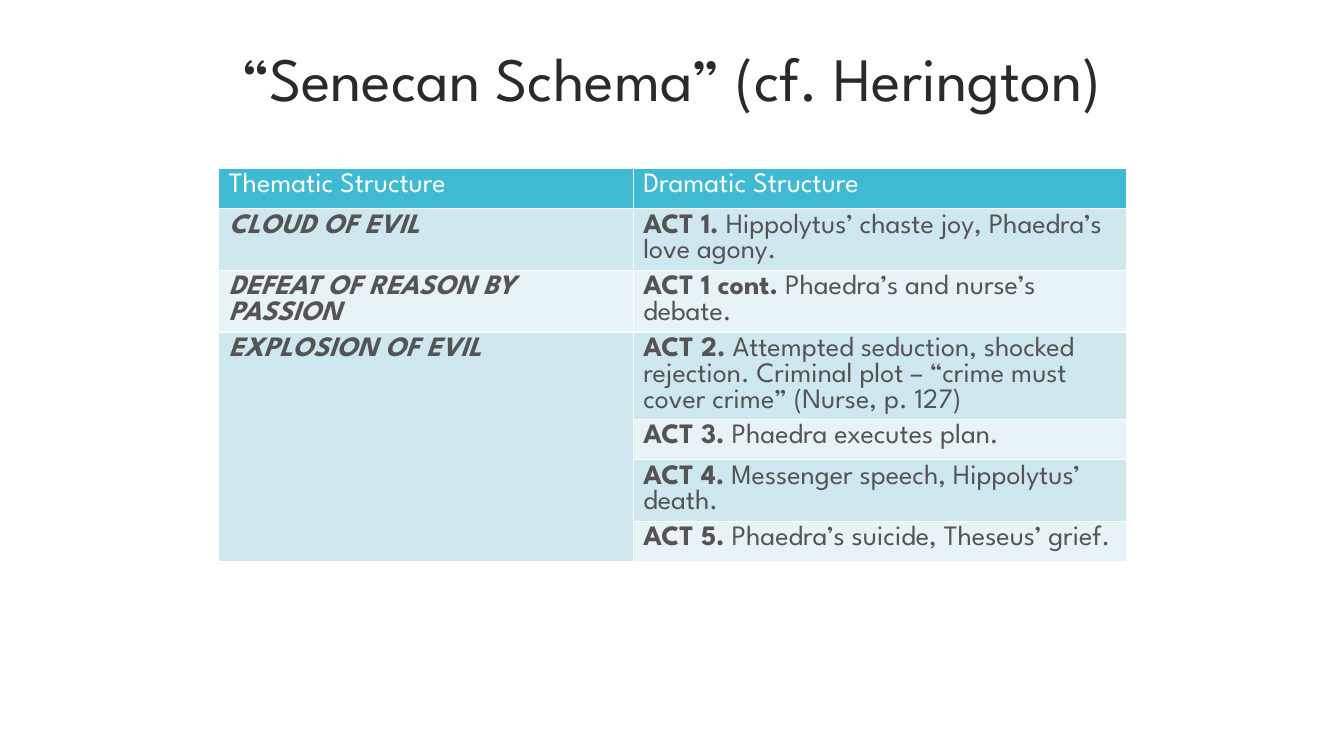
from pptx import Presentation
from pptx.dml.color import RGBColor
from pptx.enum.text import MSO_ANCHOR, PP_ALIGN
from pptx.util import Inches, Pt

FONT = "League Spartan"
INK = RGBColor(0x2A, 0x2A, 0x2A)
GREY = RGBColor(0x54, 0x54, 0x54)
WHITE = RGBColor(0xFF, 0xFF, 0xFF)
TEAL = RGBColor(0x40, 0xBA, 0xD2)
BANDS = [RGBColor(0xCF, 0xE7, 0xEE), RGBColor(0xE8, 0xF3, 0xF7)]

HEADS = ["Thematic Structure", "Dramatic Structure"]
THEMES = {
    1: "CLOUD OF EVIL",
    2: "DEFEAT OF REASON BY PASSION",
    3: "EXPLOSION OF EVIL",
}
ACTS = [
    ("ACT 1.", " Hippolytus’ chaste joy, Phaedra’s love agony."),
    ("ACT 1 cont.", " Phaedra’s and nurse’s debate."),
    ("ACT 2.", " Attempted seduction, shocked rejection. "
               "Criminal plot – “crime must cover crime” (Nurse, p. 127)"),
    ("ACT 3.", " Phaedra executes plan."),
    ("ACT 4.", " Messenger speech, Hippolytus’ death."),
    ("ACT 5.", " Phaedra’s suicide, Theseus’ grief."),
]


def add_text(frame, text, size=20, color=GREY, bold=False, italic=False,
             spacing=Pt(18.4)):
    """Append a formatted run to the first paragraph of the frame."""
    para = frame.paragraphs[0]
    para.line_spacing = spacing
    run = para.add_run()
    run.text = text
    font = run.font
    font.name, font.size = FONT, Pt(size)
    font.color.rgb = color
    font.bold, font.italic = bold, italic


prs = Presentation()
prs.slide_width, prs.slide_height = Inches(13.33), Inches(7.5)
slide = prs.slides.add_slide(prs.slide_layouts[6])

# Title
title = slide.shapes.add_textbox(
    Inches(1.33), Inches(0.08), Inches(10.67), Inches(1.45)).text_frame
title.word_wrap = True
title.vertical_anchor = MSO_ANCHOR.MIDDLE
title.paragraphs[0].alignment = PP_ALIGN.CENTER
add_text(title, "“Senecan Schema” (cf. Herington)",
         size=44, color=INK, spacing=0.9)

# Table: rows grow to fit their text
count = len(ACTS) + 1
table = slide.shapes.add_table(
    count, 2, Inches(2.17), Inches(1.67), Inches(9), Inches(0.4 * count)).table
table.columns[0].width = Inches(4.11)
table.columns[1].width = Inches(4.89)

for col, head in enumerate(HEADS):
    add_text(table.cell(0, col).text_frame, head, color=WHITE)

for row, (act, plot) in enumerate(ACTS, 1):
    frame = table.cell(row, 1).text_frame
    add_text(frame, act, bold=True)
    add_text(frame, plot)

for row, theme in THEMES.items():
    add_text(table.cell(row, 0).text_frame, theme, bold=True, italic=True)

for row in range(count):
    for col in range(2):
        fill = table.cell(row, col).fill
        fill.solid()
        fill.fore_color.rgb = BANDS[(row - 1) % 2] if row else TEAL

# The last theme spans Acts 2 to 5
table.cell(3, 0).merge(table.cell(count - 1, 0))

prs.save("out.pptx")
